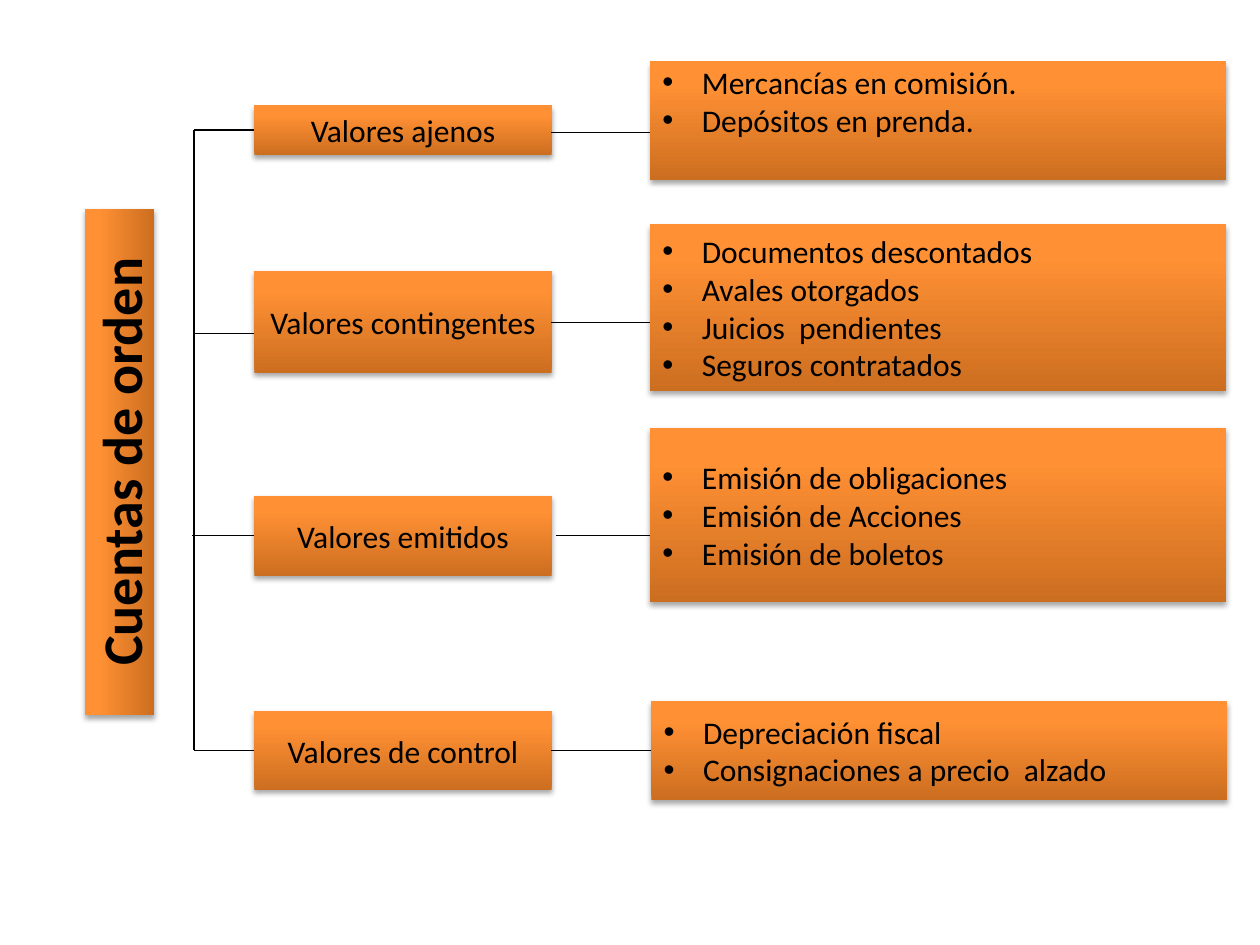
from copy import deepcopy
from dataclasses import dataclass

from lxml.etree import SubElement
from pptx import Presentation
from pptx.dml.color import RGBColor
from pptx.enum.shapes import MSO_CONNECTOR, MSO_SHAPE
from pptx.enum.text import MSO_ANCHOR, PP_ALIGN
from pptx.oxml.ns import qn
from pptx.util import Pt


@dataclass(frozen=True)
class Theme:
    font: str = "Calibri"
    text: str = "000000"
    line: str = "000000"
    gradient: tuple = ((0, "CC6E20"), (0.8, "FF9034"), (1, "FF9136"))
    body_size: float = 18
    title_size: float = 32
    trunk_width: float = 1
    branch_width: float = 0.75
    bullet_indent: float = 22.5


@dataclass(frozen=True)
class Frame:
    left: float
    top: float
    width: float
    height: float


@dataclass(frozen=True)
class Category:
    name: str
    label_top: float
    label_height: float
    items: tuple
    detail_top: float
    detail_height: float
    branch_y: float
    link_y: float
    branch_start: float = 110.9
    link_start: float = 314.9
    detail_left: float = 371.5
    top_aligned: bool = False


THEME = Theme()
TRUNK_X = 110.9
LABEL_LEFT, LABEL_WIDTH = 145.4, 169.9
DETAIL_WIDTH = 329
TITLE = Frame(-76.3, 244.1, 289.4, 39.6)

CATEGORIES = (
    Category("Valores ajenos", 60.3, 28.3,
             ("Mercancías en comisión.", "Depósitos en prenda."),
             35.1, 67.7, 74.3, 75.7, top_aligned=True),
    Category("Valores contingentes", 154.9, 58.3,
             ("Documentos descontados", "Avales otorgados",
              "Juicios  pendientes", "Seguros contratados"),
             128.2, 95.2, 190.6, 184.2),
    Category("Valores emitidos", 283.2, 45.9,
             ("Emisión de obligaciones", "Emisión de Acciones",
              "Emisión de boletos"),
             244.6, 99.2, 306.2, 306.2, branch_start=109.7, link_start=317.5),
    Category("Valores de control", 406.2, 45.4,
             ("Depreciación fiscal", "Consignaciones a precio  alzado"),
             400.5, 56.7, 428.8, 428.8, detail_left=372.2),
)


def add_gradient(box) -> None:
    box.fill.gradient()
    box.fill.gradient_angle = 90
    stop_list = box._element.spPr.find(".//" + qn("a:gsLst"))
    stop_list.append(deepcopy(stop_list[-1]))
    for stop, (position, color) in zip(box.fill.gradient_stops, THEME.gradient):
        stop.position = position
        stop.color.rgb = RGBColor.from_string(color)


def add_shadow(box) -> None:
    box.shadow.inherit = False
    effects = box._element.spPr.find(qn("a:effectLst"))
    shadow = SubElement(effects, qn("a:outerShdw"), blurRad=str(Pt(3.1)),
                        dist=str(Pt(1.8)), dir="5400000", rotWithShape="0")
    color = SubElement(shadow, qn("a:srgbClr"), val="000000")
    SubElement(color, qn("a:alpha"), val="35000")


def add_bullet(paragraph) -> None:
    properties = paragraph._p.get_or_add_pPr()
    properties.set("marL", str(Pt(THEME.bullet_indent)))
    properties.set("indent", str(-Pt(THEME.bullet_indent)))
    SubElement(properties, qn("a:buFont"), typeface="Arial")
    SubElement(properties, qn("a:buChar"), char="•")


def add_box(page, frame: Frame, lines: tuple, size: float = THEME.body_size,
            bold: bool = False, bulleted: bool = False):
    box = page.shapes.add_shape(MSO_SHAPE.RECTANGLE, Pt(frame.left), Pt(frame.top),
                                Pt(frame.width), Pt(frame.height))
    add_gradient(box)
    box.line.fill.background()
    add_shadow(box)
    text = box.text_frame
    text.word_wrap = True
    text.vertical_anchor = MSO_ANCHOR.MIDDLE
    for index, line in enumerate(lines):
        paragraph = text.add_paragraph() if index else text.paragraphs[0]
        paragraph.text = line
        paragraph.alignment = PP_ALIGN.LEFT if bulleted else PP_ALIGN.CENTER
        if bulleted:
            add_bullet(paragraph)
        font = paragraph.font
        font.name = THEME.font
        font.size = Pt(size)
        font.bold = bold
        font.color.rgb = RGBColor.from_string(THEME.text)
    return box


def add_line(page, start: tuple, end: tuple, width: float = THEME.branch_width) -> None:
    line = page.shapes.add_connector(MSO_CONNECTOR.STRAIGHT,
                                     *map(Pt, start), *map(Pt, end))
    line.line.color.rgb = RGBColor.from_string(THEME.line)
    line.line.width = Pt(width)
    SubElement(line._element.spPr, qn("a:effectLst"))


def add_category(page, category: Category) -> None:
    add_box(page, Frame(LABEL_LEFT, category.label_top, LABEL_WIDTH,
                        category.label_height), (category.name,))
    detail = add_box(page, Frame(category.detail_left, category.detail_top,
                                 DETAIL_WIDTH, category.detail_height),
                     category.items, bulleted=True)
    if category.top_aligned:
        detail.text_frame.vertical_anchor = MSO_ANCHOR.TOP
        detail.text_frame.margin_top = Pt(1)
    add_line(page, (category.branch_start, category.branch_y),
             (LABEL_LEFT, category.branch_y))
    add_line(page, (category.link_start, category.link_y),
             (category.detail_left, category.link_y))


def main() -> None:
    deck = Presentation()
    deck.slide_width, deck.slide_height = Pt(720), Pt(540)
    page = deck.slides.add_slide(deck.slide_layouts[6])
    title = add_box(page, TITLE, ("Cuentas de orden",), THEME.title_size, bold=True)
    title.rotation = 270
    add_line(page, (TRUNK_X, CATEGORIES[0].branch_y),
             (TRUNK_X, CATEGORIES[-1].branch_y), THEME.trunk_width)
    for category in CATEGORIES:
        add_category(page, category)
    deck.save("out.pptx")


if __name__ == "__main__":
    main()
